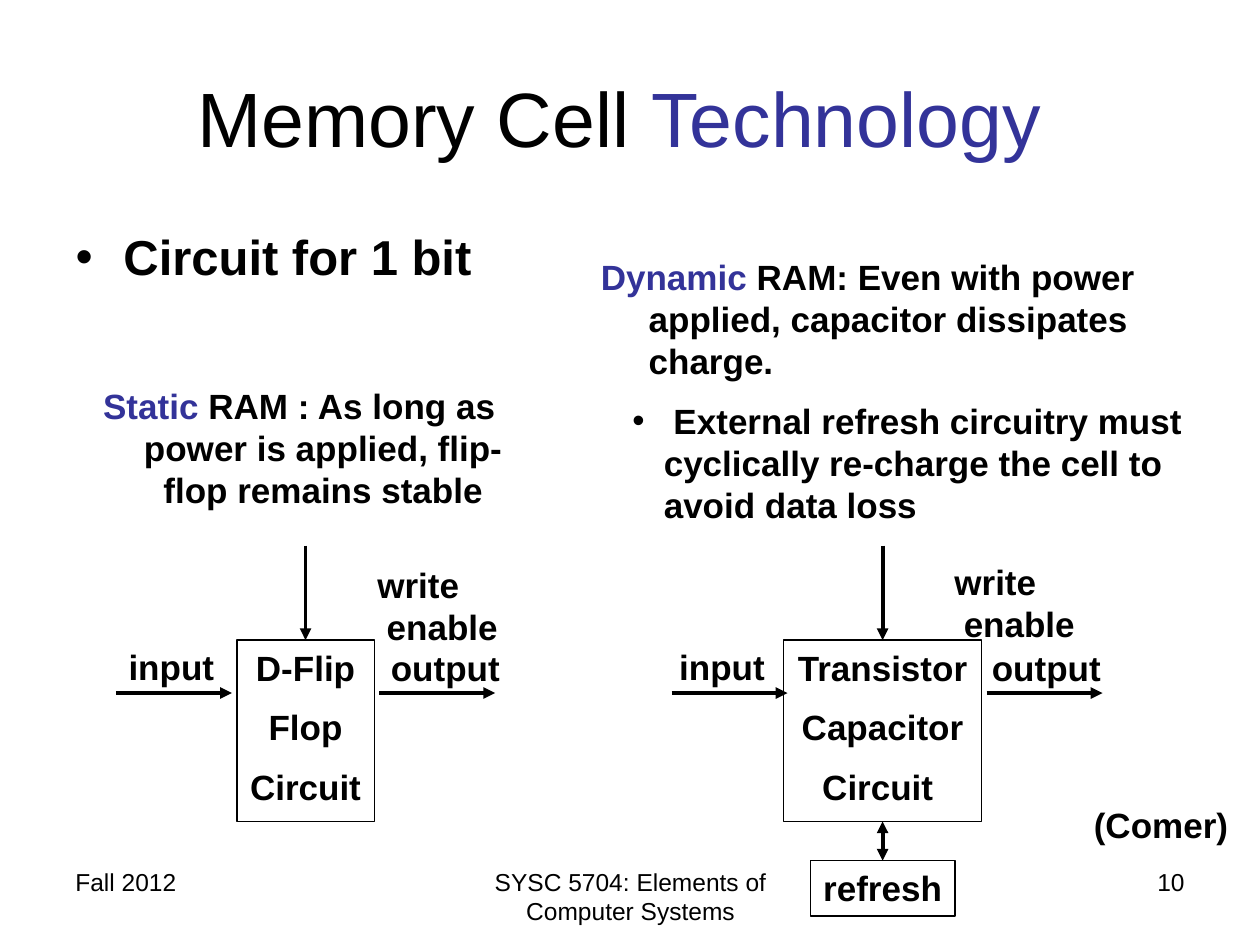
from lxml.etree import SubElement
from pptx import Presentation
from pptx.dml.color import RGBColor
from pptx.enum.shapes import MSO_CONNECTOR, MSO_SHAPE
from pptx.enum.text import MSO_ANCHOR, MSO_AUTO_SIZE, PP_ALIGN
from pptx.oxml.ns import qn
from pptx.util import Inches, Pt

# Content: a paragraph is a list of (text, colour name) runs
TITLE = [("Memory Cell ", "ink"), ("Technology ", "accent")]
BODY = [("Circuit for 1 bit", "ink")]
STATIC_RAM = [("Static", "accent"),
              (" RAM : As long as power is applied, flip-flop remains stable", "ink")]
DYNAMIC_RAM = [("Dynamic", "accent"),
               (" RAM: Even with power applied, capacitor dissipates charge.", "ink")]
REFRESH_NOTE = [(" External refresh circuitry must cyclically re-charge "
                 "the cell to avoid data loss", "ink")]
CREDIT = "(Comer)"
FOOTERS = [  # text, left, width, alignment
    ("Fall 2012", 0.5, 2.33, PP_ALIGN.LEFT),
    ("SYSC 5704: Elements of Computer Systems", 3.42, 3.17, PP_ALIGN.CENTER),
    ("10", 7.17, 2.33, PP_ALIGN.RIGHT),
]
CELLS = [
    {"lines": ["D-Flip", "Flop", "Circuit"], "left": 1.88, "width": 1.09,
     "input": 0.92, "input_arrow": 0.92, "enable": (2.42, 4.42),
     "output": 3.0, "output_arrow": 3.01, "refresh": None},
    {"lines": ["Transistor", "Capacitor", "Circuit "], "left": 6.22, "width": 1.57,
     "input": 5.29, "input_arrow": 5.33, "enable": (7.0, 4.4),
     "output": 7.77, "output_arrow": 7.83, "refresh": "refresh"},
]

THEME = {
    "font": "Arial",
    "ink": RGBColor(0, 0, 0),
    "accent": RGBColor(0x33, 0x33, 0x99),
    "title": 44, "body": 28, "label": 20, "footer": 14,
    "outline": 0.75, "arrow": 2.25,
}
HANG = 0.38
CELL_TOP, CELL_HEIGHT = 5.08, 1.44
ARROW_Y, ARROW_LENGTH = 5.5, 0.92
LABEL_HEIGHT = 0.43


def write(paragraph, runs, size, bold=True, align=None):
    paragraph.alignment = align
    for text, colour in runs:
        run = paragraph.add_run()
        run.text = text
        run.font.name = THEME["font"]
        run.font.size = Pt(THEME[size])
        run.font.bold = bold
        run.font.color.rgb = THEME[colour]


def space(paragraph, margin=HANG, indent=-HANG, before=50, bullet=None):
    properties = paragraph._p.get_or_add_pPr()
    properties.set("marL", str(Inches(margin)))
    properties.set("indent", str(Inches(indent)))
    gap = SubElement(properties, qn("a:spcBef"))
    SubElement(gap, qn("a:spcPct")).set("val", str(before * 1000))
    if bullet:
        SubElement(properties, qn("a:buFont")).set("typeface", THEME["font"])
        SubElement(properties, qn("a:buChar")).set("char", bullet)


def add_text(shapes, left, top, width, height, wrap=True):
    frame = shapes.add_textbox(*map(Inches, (left, top, width, height))).text_frame
    frame.word_wrap = wrap
    return frame


def write_labels(frame, lines):
    for number, line in enumerate(lines):
        paragraph = frame.add_paragraph() if number else frame.paragraphs[0]
        write(paragraph, [(line, "ink")], "label", align=PP_ALIGN.CENTER)
        space(paragraph)


def add_label(shapes, text, left, top, width):
    frame = add_text(shapes, left, top, width, LABEL_HEIGHT, wrap=False)
    write_labels(frame, [text])
    return frame


def add_box(shapes, lines, left, top, width, height):
    box = shapes.add_shape(MSO_SHAPE.RECTANGLE, *map(Inches, (left, top, width, height)))
    box.shadow.inherit = False
    box.fill.background()
    box.line.color.rgb = THEME["ink"]
    box.line.width = Pt(THEME["outline"])
    box.text_frame.word_wrap = False
    box.text_frame.vertical_anchor = MSO_ANCHOR.TOP
    write_labels(box.text_frame, lines)
    return box


def add_arrow(shapes, x1, y1, x2, y2, both_ends=False):
    arrow = shapes.add_connector(MSO_CONNECTOR.STRAIGHT, *map(Inches, (x1, y1, x2, y2)))
    arrow.line.color.rgb = THEME["ink"]
    arrow.line.width = Pt(THEME["arrow"])
    outline = arrow.line._get_or_add_ln()
    for end in ("a:headEnd", "a:tailEnd") if both_ends else ("a:tailEnd",):
        SubElement(outline, qn(end)).set("type", "triangle")
    SubElement(arrow._element.spPr, qn("a:effectLst"))
    return arrow


def add_cell(slide, cell):
    shapes = slide.shapes.add_group_shape().shapes
    middle = cell["left"] + cell["width"] / 2
    bottom = CELL_TOP + CELL_HEIGHT
    circuit = add_box(shapes, cell["lines"], cell["left"], CELL_TOP,
                      cell["width"], CELL_HEIGHT)

    # Signal names
    add_label(shapes, "input", cell["input"], 5.07, 0.88)
    enable = add_label(shapes, "write enable", *cell["enable"], 1.8)
    enable.word_wrap = True
    enable.margin_left = enable.margin_right = Inches(0.15)
    add_label(shapes, "output", cell["output"], CELL_TOP, 1.07)

    # Signal arrows
    add_arrow(shapes, middle, 4.33, middle, CELL_TOP).end_connect(circuit, 0)
    for start in (cell["input_arrow"], cell["output_arrow"]):
        add_arrow(shapes, start, ARROW_Y, start + ARROW_LENGTH, ARROW_Y)

    # Refresh circuit
    if cell["refresh"]:
        top, width = 6.83, 1.15
        refresh = add_box(shapes, [cell["refresh"]], middle - width / 2, top, width, 0.44)
        link = add_arrow(shapes, middle, bottom, middle, top, both_ends=True)
        link.begin_connect(circuit, 2)
        link.end_connect(refresh, 0)


def main():
    deck = Presentation()
    deck.slide_width, deck.slide_height = Inches(10), Inches(7.5)
    slide = deck.slides.add_slide(deck.slide_layouts[1])

    # Title and list
    title, body = slide.shapes.title, slide.placeholders[1]
    for holder, top, height in ((title, 0.3, 1.25), (body, 1.75, 4.95)):
        holder.left, holder.top = Inches(0.5), Inches(top)
        holder.width, holder.height = Inches(9), Inches(height)
        holder.text_frame.auto_size = MSO_AUTO_SIZE.NONE
    title.text_frame.vertical_anchor = MSO_ANCHOR.MIDDLE
    write(title.text_frame.paragraphs[0], TITLE, "title", False, PP_ALIGN.CENTER)
    topic = body.text_frame.paragraphs[0]
    write(topic, BODY, "body")
    space(topic, before=20, bullet="•")

    # Footers
    for text, left, width, align in FOOTERS:
        footer = add_text(slide.shapes, left, 6.83, width, 0.52)
        write(footer.paragraphs[0], [(text, "ink")], "footer", False, align)

    # Circuit diagrams
    for cell in CELLS:
        add_cell(slide, cell)

    # Explanations
    static = add_text(slide.shapes, 0.5, 3, 3.75, 1.1).paragraphs[0]
    write(static, STATIC_RAM, "label", align=PP_ALIGN.CENTER)
    space(static)
    dynamic = add_text(slide.shapes, 4.67, 1.98, 5.16, 2.27)
    write(dynamic.paragraphs[0], DYNAMIC_RAM, "label")
    space(dynamic.paragraphs[0])
    note = dynamic.add_paragraph()
    note.level = 1
    write(note, REFRESH_NOTE, "label")
    space(note, margin=0.5, indent=-0.25, bullet="•")
    add_label(slide.shapes, CREDIT, 8.58, 6.33, 1.27)

    deck.save("out.pptx")


if __name__ == "__main__":
    main()
